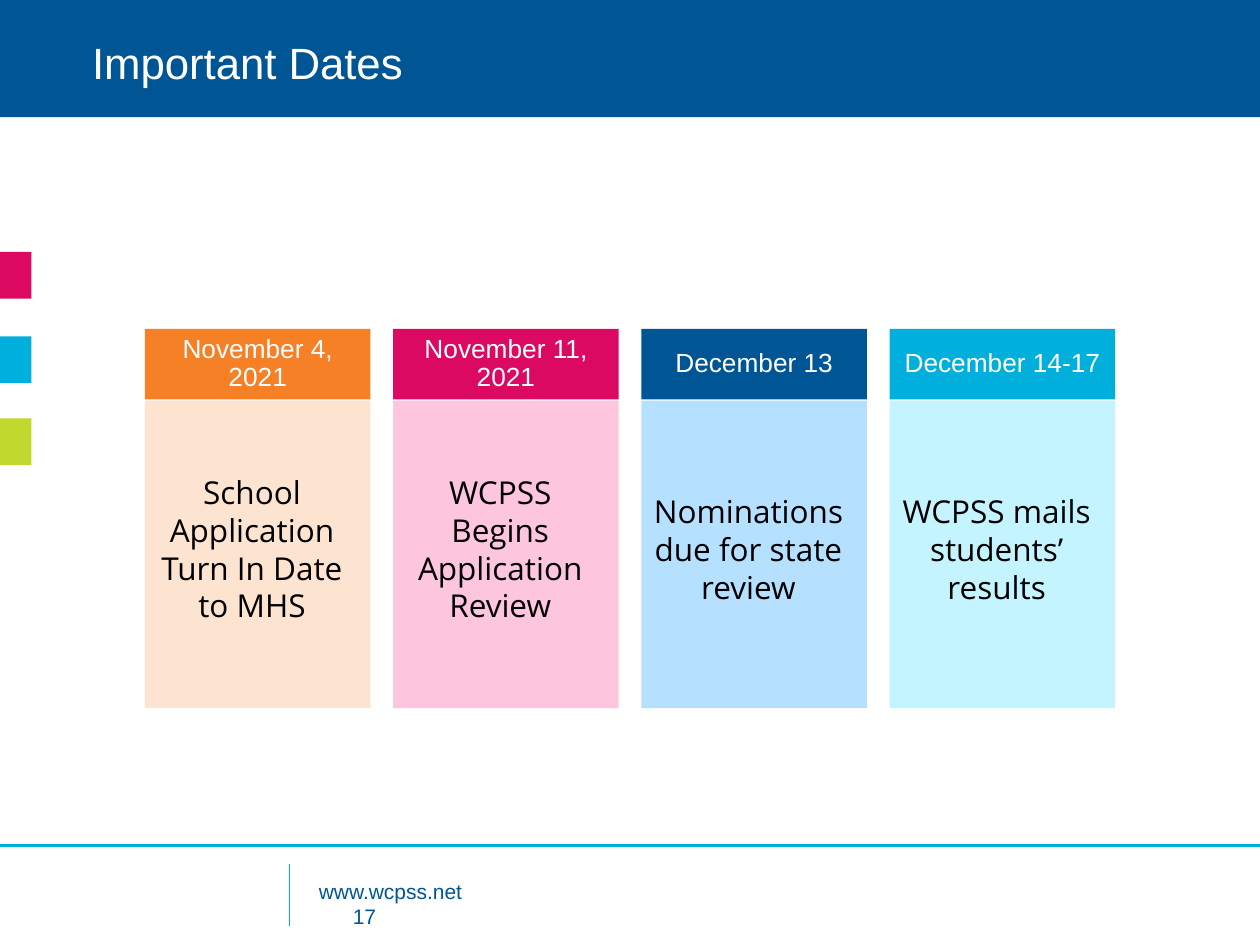
from lxml import etree
from pptx import Presentation
from pptx.dml.color import RGBColor
from pptx.enum.shapes import MSO_CONNECTOR, MSO_SHAPE
from pptx.enum.text import MSO_ANCHOR, PP_ALIGN
from pptx.oxml.ns import qn
from pptx.util import Inches, Pt

RECT = MSO_SHAPE.RECTANGLE
LINE = MSO_CONNECTOR.STRAIGHT
LEFT, MID = PP_ALIGN.LEFT, PP_ALIGN.CENTER
TOP, CENTER = MSO_ANCHOR.TOP, MSO_ANCHOR.MIDDLE

HUES = {
    "white": "FFFFFF", "black": "000000", "blue": "005595",
    "cyan": "00AFDB", "pink": "DB0962", "lime": "C1D82F",
    "orange": "F58025", "peach": "FDE4D1", "rose": "FDC6DE",
    "sky": "B6E0FF", "ice": "C4F4FF",
}

STYLES = {
    "title": dict(size=25, font="Arial", hue="white", align=LEFT, space=0.9,
                  anchor=CENTER, pads=(0.04, 0.02, 0.04, 0.02)),
    "date": dict(size=15, font="Arial", hue="white", align=MID, space=0.9,
                 anchor=CENTER, pads=(0.04, 0.04, 0.04, 0.04)),
    "event": dict(size=18, font="Open Sans", hue="black", align=MID, space=1.0,
                  anchor=CENTER, pads=(0.08, 0.08, 0.17, 0.17)),
    "foot": dict(size=12, font="Arial", hue="blue", align=LEFT, space=1.0,
                 anchor=TOP, pads=(0.04, 0.02, 0.04, 0.02)),
}

TABS = [(2, "pink"), (2.67, "cyan"), (3.32, "lime")]

DATES = [
    ("November 4, 2021", "School Application Turn In Date to MHS", "orange", "peach"),
    ("November 11, 2021", "WCPSS Begins Application Review", "pink", "rose"),
    ("December 13", "Nominations due for state review", "blue", "sky"),
    ("December 14-17", "WCPSS mails students’ results", "cyan", "ice"),
]


def color(name):
    return RGBColor.from_string(HUES[name])


def write(shape, text, style):
    look = STYLES[style]
    frame = shape.text_frame
    frame.text = text
    frame.word_wrap = True
    frame.vertical_anchor = look["anchor"]
    for side, pad in zip(("left", "top", "right", "bottom"), look["pads"]):
        setattr(frame, f"margin_{side}", Inches(pad))
    font = {"size": Pt(look["size"]), "name": look["font"]}
    for para in frame.paragraphs:
        para.alignment = look["align"]
        para.line_spacing = look["space"]
        for run in para.runs:
            for key, value in font.items():
                setattr(run.font, key, value)
            run.font.color.rgb = color(look["hue"])


def add_block(slide, box, hue):
    shape = slide.shapes.add_shape(RECT, *map(Inches, box))
    shape.shadow.inherit = False
    shape.fill.solid()
    shape.fill.fore_color.rgb = color(hue)
    shape.line.fill.background()
    return shape


def add_rule(slide, ends, width):
    rule = slide.shapes.add_connector(LINE, *map(Inches, ends))
    rule.line.color.rgb = color("cyan")
    rule.line.width = Pt(width)
    etree.SubElement(rule.element.spPr, qn("a:effectLst"))


def add_foot(slide):
    box = slide.shapes.add_textbox(*map(Inches, (2.49, 6.95, 6.83, 0.45)))
    write(box, "www.wcpss.net\n17", "foot")
    props = box.text_frame.paragraphs[1]._p.get_or_add_pPr()
    props.set("marL", str(Inches(0.27)))


def add_title(slide, text):
    title = slide.shapes.title
    place = {"left": 0.69, "top": 0.12, "width": 8.62, "height": 0.8}
    for key, value in place.items():
        setattr(title, key, Inches(value))
    write(title, text, "title")
    title.element.getparent().append(title.element)


def add_dates(slide):
    for col, (date, event, dark, pale) in enumerate(DATES):
        left = 1.15 + 1.97 * col
        write(add_block(slide, (left, 2.61, 1.79, 0.56), dark), date, "date")
        write(add_block(slide, (left, 3.18, 1.79, 2.44), pale), event, "event")


def main():
    deck = Presentation()
    deck.slide_width, deck.slide_height = Inches(10), Inches(7.5)
    slide = deck.slides.add_slide(deck.slide_layouts[5])
    add_rule(slide, (0, 6.71, 10, 6.71), 2)
    for top, hue in TABS:
        add_block(slide, (0, top, 0.25, 0.37), hue)
    add_rule(slide, (2.3, 6.86, 2.3, 7.35), 0.75)
    add_foot(slide)
    add_block(slide, (0, 0, 10, 0.93), "blue")
    add_dates(slide)
    add_title(slide, "Important Dates")
    deck.save("out.pptx")


if __name__ == "__main__":
    main()
